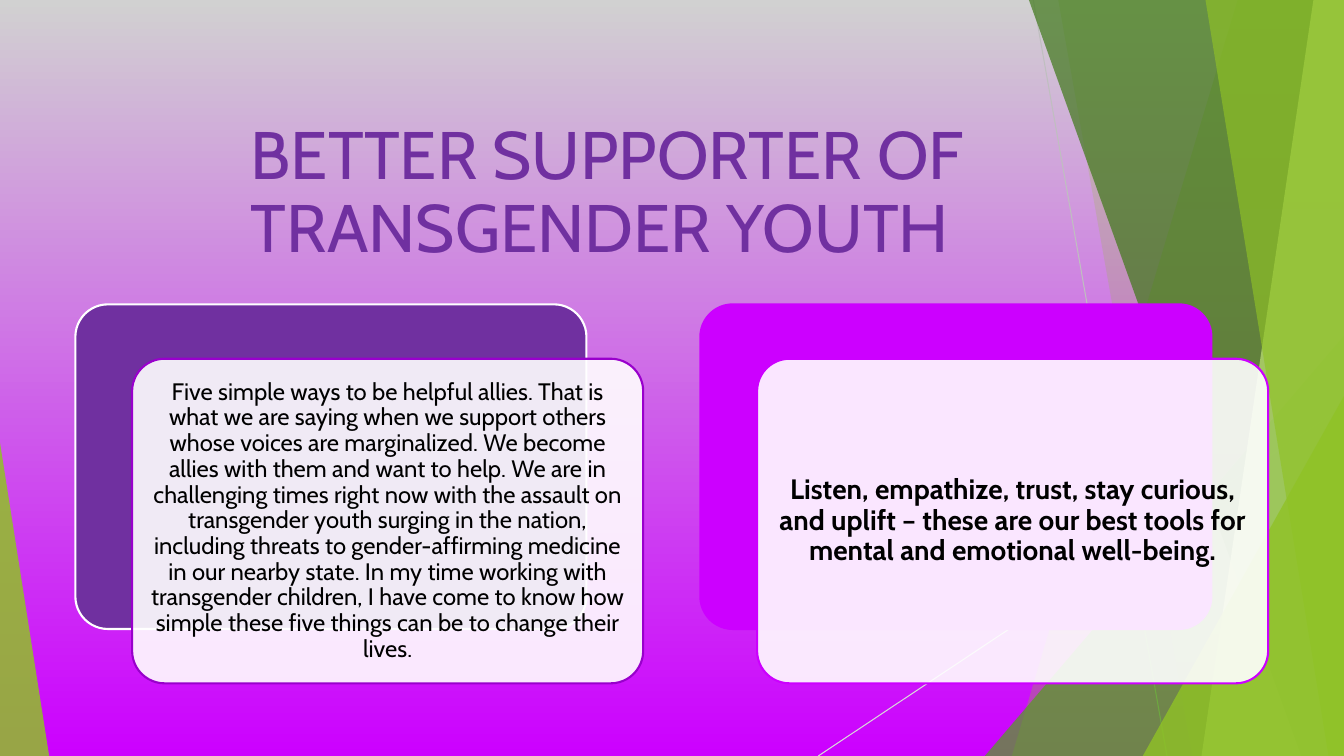
from dataclasses import dataclass

from lxml.etree import SubElement
from pptx import Presentation
from pptx.dml.color import RGBColor
from pptx.enum.shapes import MSO_CONNECTOR as Connector
from pptx.enum.shapes import MSO_SHAPE as Preset
from pptx.enum.text import MSO_ANCHOR as Anchor
from pptx.enum.text import MSO_AUTO_SIZE as AutoSize
from pptx.enum.text import PP_ALIGN as Align
from pptx.oxml.ns import qn
from pptx.util import Cm, Pt

COLORS = {
    "violet": "7030A0", "magenta": "CC00FF", "plum": "9900CC",
    "white": "FFFFFF", "black": "000000", "silver": "D1D1D1",
    "gray": "BFBFBF", "light gray": "D9D9D9",
    "lime": "90C226", "green": "54A021", "forest": "3F7819", "pale lime": "C0E474",
}
FONT = "Cabin"
PAGE_WIDTH, PAGE_HEIGHT = 33.87, 19.05
CARD_WIDTH, CARD_HEIGHT = 12.88, 8.18
CARDS_LEFT, CARDS_TOP, CARD_PITCH = 1.9, 7.67, 15.75
FRONT_SHIFT_X, FRONT_SHIFT_Y = 1.43, 1.37


@dataclass
class Ray:
    start: tuple[float, float]
    end: tuple[float, float]
    color: str


@dataclass
class Band:
    """A facet from a slanted left edge to the right side of the page."""
    top_x: float
    bottom_x: float
    color: str
    opacity: int


@dataclass
class Wedge:
    """A right triangle standing on the bottom of the page."""
    left: float
    top: float
    width: float
    apex: int
    color: str
    opacity: int


@dataclass
class Card:
    text: str
    size: int
    bold: bool
    inset: float
    back: str
    back_line: str
    front_line: str


RAYS = [
    Ray((26.04, 0), (29.41, PAGE_HEIGHT), "gray"),
    Ray((PAGE_WIDTH, 10.24), (20.62, PAGE_HEIGHT), "light gray"),
]
FACETS = [
    Band(31.19, 25.5, "lime", 30),
    Band(26.67, 30.05, "lime", 20),
    Wedge(24.82, 8.46, 9.05, 1, "green", 72),
    Band(25.93, 32.79, "forest", 70),
    Band(33.1, 30.28, "pale lime", 70),
    Band(30.38, 33.48, "lime", 65),
    Wedge(28.8, 9.98, 5.07, 1, "lime", 80),
    Wedge(0, 11.15, 1.24, 0, "lime", 85),
]
CARDS = [
    Card("Five simple ways to be helpful allies. That is what we are saying when we "
         "support others whose voices are marginalized. We become allies with them and "
         "want to help. We are in challenging times right now with the assault on "
         "transgender youth surging in the nation, including threats to gender-affirming "
         "medicine in our nearby state. In my time working with transgender children, I "
         "have come to know how simple these five things can be to change their lives.",
         17, False, 0.18, "violet", "white", "plum"),
    Card("Listen, empathize, trust, stay curious, and uplift – these are our best tools "
         "for mental and emotional well-being.",
         20, True, 0.2, "magenta", "magenta", "magenta"),
]


def rgb(name: str) -> RGBColor:
    return RGBColor.from_string(COLORS[name])


def paint(shape, color: str, opacity: int = 100, line: str | None = None) -> None:
    shape.shadow.inherit = False
    shape.fill.solid()
    shape.fill.fore_color.rgb = rgb(color)
    if opacity < 100:
        tint = shape.fill._xPr.find(qn("a:solidFill"))[0]
        SubElement(tint, qn("a:alpha"), val=str(opacity * 1000))
    if line:
        shape.line.color.rgb = rgb(line)
        shape.line.width = Pt(1.5)
    else:
        shape.line.fill.background()


def draw_ray(page, ray: Ray) -> None:
    line = page.shapes.add_connector(
        Connector.STRAIGHT, *map(Cm, ray.start), *map(Cm, ray.end))
    line.line.color.rgb = rgb(ray.color)
    line.line.width = Pt(0.75)
    SubElement(line._element.spPr, qn("a:effectLst"))


def draw_facet(page, facet: Band | Wedge) -> None:
    if isinstance(facet, Band):
        corners = [(PAGE_WIDTH, 0), (PAGE_WIDTH, PAGE_HEIGHT), (facet.bottom_x, PAGE_HEIGHT)]
        outline = page.shapes.build_freeform(Cm(facet.top_x), 0)
        outline.add_line_segments([(Cm(x), Cm(y)) for x, y in corners], close=True)
        shape = outline.convert_to_shape()
    else:
        shape = page.shapes.add_shape(
            Preset.ISOSCELES_TRIANGLE, Cm(facet.left), Cm(facet.top),
            Cm(facet.width), Cm(PAGE_HEIGHT - facet.top))
        shape.adjustments[0] = facet.apex
    paint(shape, facet.color, facet.opacity)


def write(shape, text: str, size: int, color: str, align: Align, bold: bool = False) -> None:
    frame = shape.text_frame
    frame.text = text
    frame.word_wrap = True
    frame.auto_size = AutoSize.NONE
    frame.vertical_anchor = Anchor.MIDDLE
    para = frame.paragraphs[0]
    para.alignment = align
    para.line_spacing = 0.9
    para.font.name = FONT
    para.font.size = Pt(size)
    para.font.bold = bold
    para.font.color.rgb = rgb(color)


def add_rounded_box(page, left: float, top: float):
    box = page.shapes.add_shape(
        Preset.ROUNDED_RECTANGLE, Cm(left), Cm(top), Cm(CARD_WIDTH), Cm(CARD_HEIGHT))
    box.adjustments[0] = 0.1
    return box


def draw_card(page, card: Card, left: float) -> None:
    back = add_rounded_box(page, left, CARDS_TOP)
    paint(back, card.back, line=card.back_line)
    front = add_rounded_box(page, left + FRONT_SHIFT_X, CARDS_TOP + FRONT_SHIFT_Y)
    paint(front, "white", 90, card.front_line)
    frame = front.text_frame
    frame.margin_left = frame.margin_right = Cm(card.inset)
    frame.margin_top = frame.margin_bottom = Cm(card.inset)
    write(front, card.text, card.size, "black", Align.CENTER, card.bold)


def main() -> None:
    deck = Presentation()
    deck.slide_width, deck.slide_height = Cm(PAGE_WIDTH), Cm(PAGE_HEIGHT)
    page = deck.slides.add_slide(deck.slide_layouts.get_by_name("Title Only"))

    backdrop = page.background.fill
    backdrop.gradient()
    backdrop.gradient_angle = 90
    for stop, color in zip(backdrop.gradient_stops, ("magenta", "silver")):
        stop.color.rgb = rgb(color)

    for ray in RAYS:
        draw_ray(page, ray)
    for facet in FACETS:
        draw_facet(page, facet)

    title = page.shapes.title
    title.left, title.top, title.width, title.height = map(Cm, (6.07, 3.1, 21.16, 3.58))
    write(title, "BETTER SUPPORTER OF TRANSGENDER YOUTH", 48, "violet", Align.LEFT)

    for index, card in enumerate(CARDS):
        draw_card(page, card, CARDS_LEFT + index * CARD_PITCH)
    deck.save("out.pptx")


if __name__ == "__main__":
    main()
